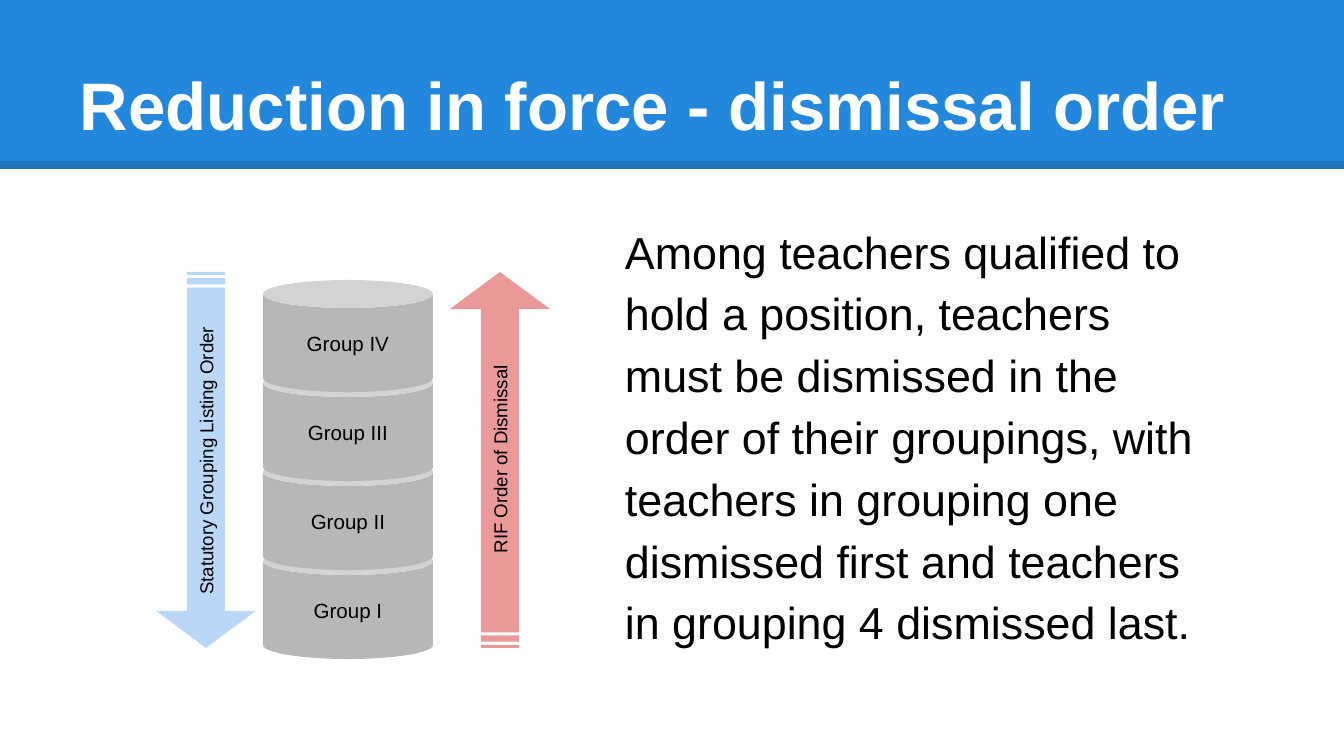
from lxml import etree
from pptx import Presentation
from pptx.dml.color import RGBColor
from pptx.enum.shapes import MSO_CONNECTOR, MSO_SHAPE as SHAPE
from pptx.enum.text import MSO_ANCHOR as ANCHOR, PP_ALIGN as ALIGN
from pptx.oxml.ns import qn
from pptx.util import Pt

EMU_PER_PX = 914400 / 134.4
THEME = {
    "font": "Arial",
    "band": "2388DB", "rule": "000000", "title": "FFFFFF", "text": "000000",
    "can": "B7B7B7", "dismissal": "EA9999", "listing": "BBD7F8",
    "title_pt": 36, "body_pt": 24, "can_pt": 11, "arrow_pt": 10, "rule_pt": 4.5,
}


def px(*values):
    return [round(v * EMU_PER_PX) for v in values]


def write(sp, text, size, color, anchor=ANCHOR.MIDDLE, align=ALIGN.CENTER, bold=False):
    tf = sp.text_frame
    tf.word_wrap = True
    tf.vertical_anchor = anchor
    tf.margin_left = tf.margin_right = tf.margin_top = tf.margin_bottom = px(13)[0]
    tf.text = text
    p = tf.paragraphs[0]
    p.alignment = align
    f = p.runs[0].font
    f.name, f.size, f.bold = THEME["font"], Pt(THEME[size]), bold
    f.color.rgb = RGBColor.from_string(THEME[color])
    return tf


prs = Presentation()
prs.slide_width, prs.slide_height = px(1344, 756)
s = prs.slides.add_slide(prs.slide_layouts[6])

band = s.shapes.add_shape(SHAPE.RECTANGLE, *px(0, 0, 1344, 169))
band.shadow.inherit = False
band.fill.solid()
band.fill.fore_color.rgb = RGBColor.from_string(THEME["band"])
band.line.fill.background()

rule = s.shapes.add_connector(MSO_CONNECTOR.STRAIGHT, *px(0, 165, 1344, 165))
rule.line.width = Pt(THEME["rule_pt"])
rule.line.color.rgb = RGBColor.from_string(THEME["rule"])
clr = rule.line._ln.find(".//" + qn("a:srgbClr"))
etree.SubElement(clr, qn("a:alpha"), val="15000")
etree.SubElement(rule._element.spPr, qn("a:effectLst"))

title = s.shapes.add_textbox(*px(67, 31, 1210, 126))
write(title, "Reduction in force - dismissal order", "title_pt", "title",
      ANCHOR.BOTTOM, ALIGN.LEFT, True)

body = s.shapes.add_textbox(*px(612, 224, 605, 477))
tf = write(body, "Among teachers qualified to hold a position, teachers must be dismissed "
           "in the order of their groupings, with teachers in grouping one dismissed first "
           "and teachers in grouping 4 dismissed last.", "body_pt", "text", align=ALIGN.LEFT)
tf.margin_bottom = px(73)[0]
tf.paragraphs[0].line_spacing = 1.15

for i, numeral in enumerate(["I", "II", "III", "IV"]):
    can = s.shapes.add_shape(SHAPE.CAN, *px(263, 547 - 89 * i, 170, 112))
    can.shadow.inherit = False
    can.adjustments[0] = 0.25
    can.fill.solid()
    can.fill.fore_color.rgb = RGBColor.from_string(THEME["can"])
    can.line.fill.background()
    write(can, f"Group {numeral}", "can_pt", "text")

for left, label, color, flipped in [
    (312, "RIF Order of Dismissal", "dismissal", False),
    (18, "Statutory Grouping Listing Order", "listing", True),
]:
    arrow = s.shapes.add_shape(SHAPE.STRIPED_RIGHT_ARROW, *px(left, 410, 376, 100))
    arrow.shadow.inherit = False
    arrow.rotation = 270
    arrow.adjustments[0], arrow.adjustments[1] = 0.38, 0.37
    if flipped:
        arrow._element.spPr.xfrm.set("flipH", "1")
    arrow.fill.solid()
    arrow.fill.fore_color.rgb = RGBColor.from_string(THEME[color])
    arrow.line.fill.background()
    write(arrow, label, "arrow_pt", "text")

prs.save("out.pptx")
